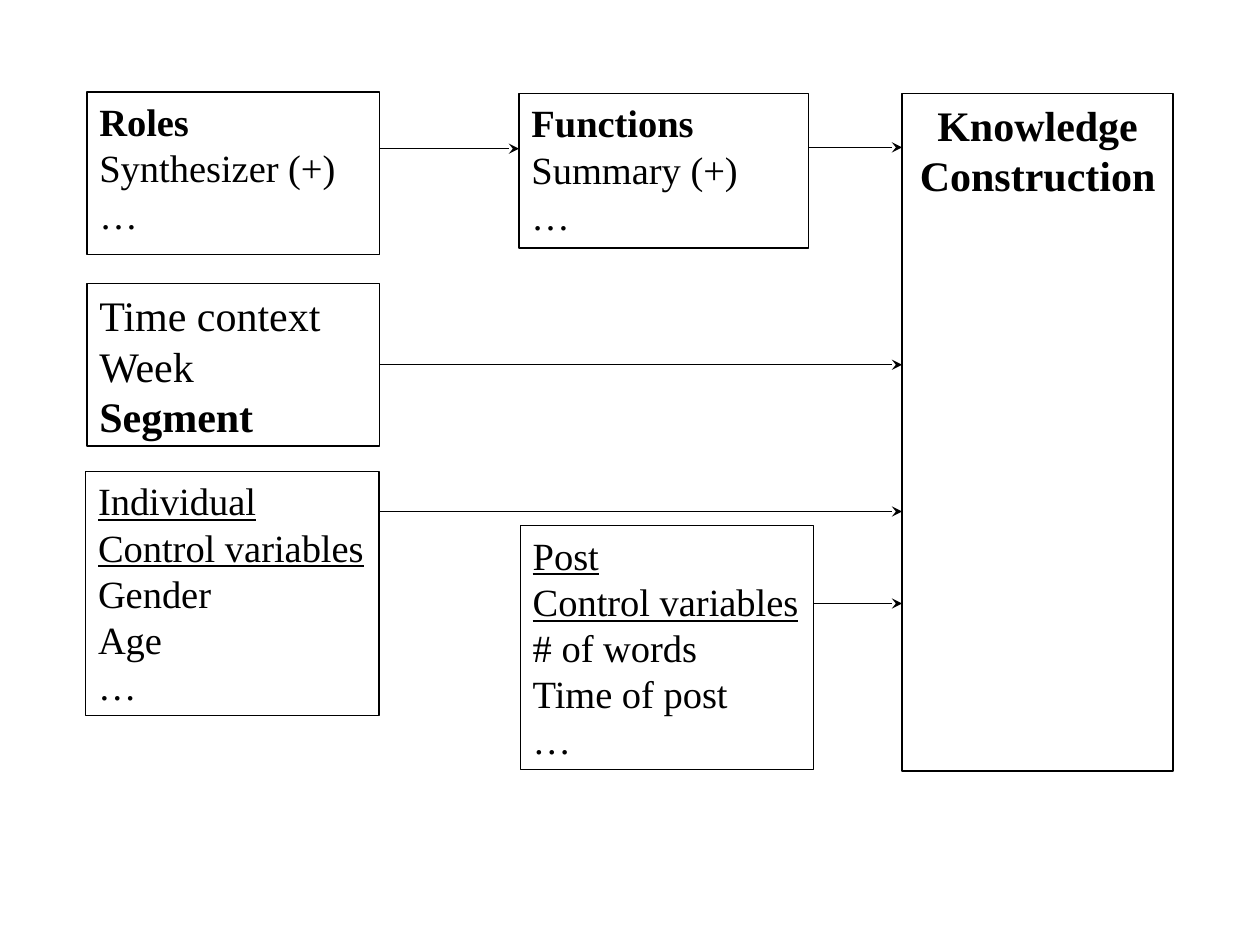
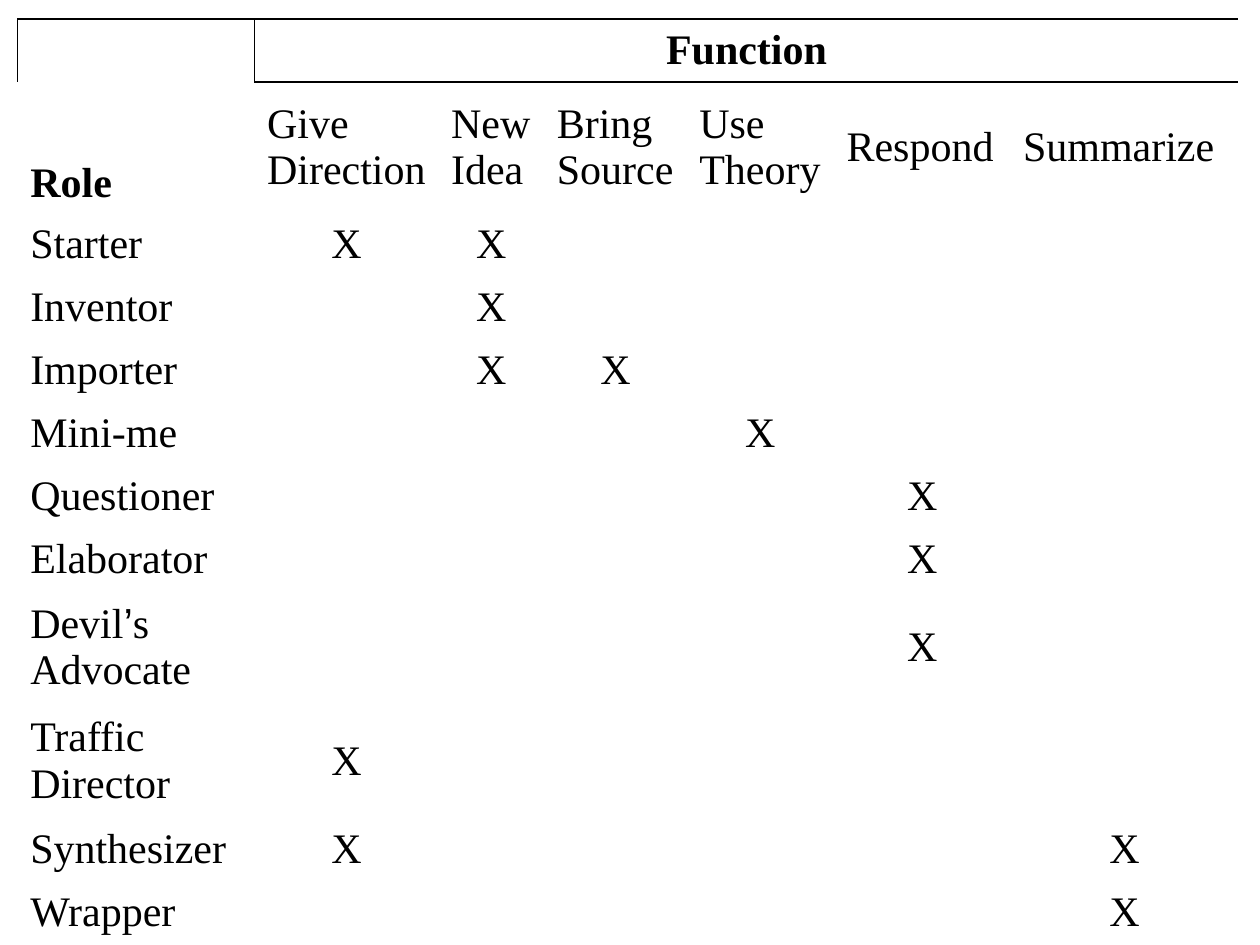
import dataclasses

import pptx
import pptx.dml.color
import pptx.enum.shapes
import pptx.enum.text
import pptx.oxml
import pptx.oxml.ns
import pptx.util
from pptx.util import Inches


@dataclasses.dataclass(frozen=True)
class Theme:
    ink: str = "000000"
    font: str = "Times New Roman"
    quote_font: str = "Arial"
    large: float = 24
    medium: float = 22
    line_width: float = 0.75
    box_leading: float = 1.2
    table_leading: float = 1.1


theme = Theme()
ink = pptx.dml.color.RGBColor.from_string(theme.ink)
qn = pptx.oxml.ns.qn
anchors = pptx.enum.text.MSO_ANCHOR
LEFT, CENTER = pptx.enum.text.PP_ALIGN.LEFT, pptx.enum.text.PP_ALIGN.CENTER


def write_lines(frame, lines, size, leading, alignment=LEFT):
    """Write one paragraph per line; * starts bold, _ starts underlined."""
    for index, line in enumerate(lines):
        paragraph = frame.paragraphs[0] if index == 0 else frame.add_paragraph()
        paragraph.alignment = alignment
        paragraph.line_spacing = pptx.util.Pt(round(size * leading, 1))
        before, quote, after = line.lstrip("*_").partition("’")
        for text in filter(None, (before, quote, after)):
            run = paragraph.add_run()
            run.text = text
            run.font.name = theme.quote_font if text == "’" else theme.font
            run.font.size = pptx.util.Pt(size)
            run.font.bold = line.startswith("*")
            run.font.underline = line.startswith("_")
            run.font.color.rgb = ink


def set_borders(cell, widths):
    """Draw the sides named in widths (points) and clear the others."""
    properties = cell._tc.get_or_add_tcPr()
    for position, side in enumerate(("lnL", "lnR", "lnT", "lnB")):
        width = widths.get(side, 0)
        paint = (f'<a:solidFill><a:srgbClr val="{theme.ink}"/></a:solidFill>'
                 if width else "<a:noFill/>")
        properties.insert(position, pptx.oxml.parse_xml(
            f'<a:{side} {pptx.oxml.ns.nsdecls("a")} '
            f'w="{int(pptx.util.Pt(width))}">{paint}</a:{side}>'))


presentation = pptx.Presentation()
presentation.slide_width = Inches(10)
presentation.slide_height = Inches(7.5)
blank_layout = presentation.slide_layouts[6]

# Slide 1: model of knowledge construction
slide = presentation.slides.add_slide(blank_layout)
boxes = {
    "outcome": (7.16, 0.74, 2.15, 5.38, theme.large, CENTER,
                ["*Knowledge", "*Construction"]),
    "functions": (4.12, 0.74, 2.3, 1.23, theme.medium, LEFT,
                  ["*Functions", "Summary (+)", "…"]),
    "roles": (0.69, 0.73, 2.32, 1.29, theme.medium, LEFT,
              ["*Roles", "Synthesizer (+)", "…"]),
    "individual": (0.68, 3.74, 2.33, 1.94, theme.medium, LEFT,
                   ["_Individual", "_Control variables", "Gender", "Age", "…"]),
    "post": (4.13, 4.17, 2.33, 1.94, theme.medium, LEFT,
             ["_Post", "_Control variables", "# of words", "Time of post", "…"]),
    "time": (0.69, 2.25, 2.32, 1.29, theme.large, LEFT,
             ["Time context", "Week", "*Segment"]),
}
shapes = {}
for name, (left, top, width, height, size, alignment, lines) in boxes.items():
    shape = slide.shapes.add_shape(
        pptx.enum.shapes.MSO_SHAPE.RECTANGLE,
        Inches(left), Inches(top), Inches(width), Inches(height))
    shape.shadow.inherit = False
    shape.fill.background()
    shape.line.color.rgb = ink
    shape.line.width = pptx.util.Pt(theme.line_width)
    shape.text_frame.word_wrap = True
    shape.text_frame.vertical_anchor = anchors.TOP
    write_lines(shape.text_frame, lines, size, theme.box_leading, alignment)
    shapes[name] = shape

# Arrows run level from the right side of one box to the left side of another
time_middle = shapes["time"].top + shapes["time"].height // 2
arrows = [
    ("functions", "outcome", Inches(1.17)),
    ("post", "outcome", Inches(4.79)),
    ("roles", "functions", Inches(1.18)),
    ("individual", "outcome", Inches(4.06)),
    ("time", "outcome", time_middle),
]
for source, target, height in arrows:
    start = shapes[source]
    connector = slide.shapes.add_connector(
        pptx.enum.shapes.MSO_CONNECTOR.STRAIGHT,
        start.left + start.width, height, shapes[target].left, height)
    if height == time_middle:
        connector.begin_connect(start, 3)
    connector.line.color.rgb = ink
    connector.line.width = pptx.util.Pt(theme.line_width)
    properties = connector._element.spPr
    outline = properties.find(qn("a:ln"))
    outline.append(outline.makeelement(qn("a:tailEnd"), {"type": "stealth"}))
    properties.append(properties.makeelement(qn("a:effectLst"), {}))

# Slide 2: functions of each role
slide = presentation.slides.add_slide(blank_layout)
functions = ["Give\nDirection", "New\nIdea", "Bring\nSource", "Use\nTheory",
             "Respond", "Summarize"]
role_marks = {
    "Starter": (1, 2),
    "Inventor": (2,),
    "Importer": (2, 3),
    "Mini-me": (4,),
    "Questioner": (5,),
    "Elaborator": (5,),
    "Devil’s\nAdvocate": (5,),
    "Traffic\nDirector": (1,),
    "Synthesizer": (1, 6),
    "Wrapper": (6,),
}
column_widths = [1.88, 1.46, 0.84, 1.13, 1.17, 1.4, 1.81]
row_heights = [0.5, 1.04] + [0.9 if "\n" in role else 0.5 for role in role_marks]
rows = [["", "*Function"] + [""] * 5, ["*Role"] + functions]
for role, marks in role_marks.items():
    rows.append([role] + ["X" if column in marks else "" for column in range(1, 7)])

table = slide.shapes.add_table(
    len(rows), len(column_widths), Inches(0.14), Inches(0.15),
    Inches(sum(column_widths)), Inches(sum(row_heights))).table
table.first_row = False
table.horz_banding = False
for column, width in zip(table.columns, column_widths):
    column.width = Inches(width)
for row, height in zip(table.rows, row_heights):
    row.height = Inches(height)
table.cell(0, 1).merge(table.cell(0, 6))

# Cell text and rules
for row_index, row in enumerate(rows):
    for column_index, text in enumerate(row):
        cell = table.cell(row_index, column_index)
        cell.fill.background()
        cell.vertical_anchor = anchors.BOTTOM if text == "*Role" else anchors.MIDDLE
        if text:
            alignment = CENTER if text in ("X", "*Function") else LEFT
            write_lines(cell.text_frame, text.split("\n"), theme.large,
                        theme.table_leading, alignment)
        borders = {}
        if row_index == 0 and column_index == 0:
            borders = {"lnL": 0.25, "lnR": 0.25, "lnT": 1}
        elif row_index == 0:
            borders = {"lnT": 1, "lnB": 1}
            if column_index == 1:
                borders["lnL"] = 0.25
        elif row_index == 1 and column_index > 0:
            borders = {"lnT": 1}
        set_borders(cell, borders)

presentation.save("out.pptx")
